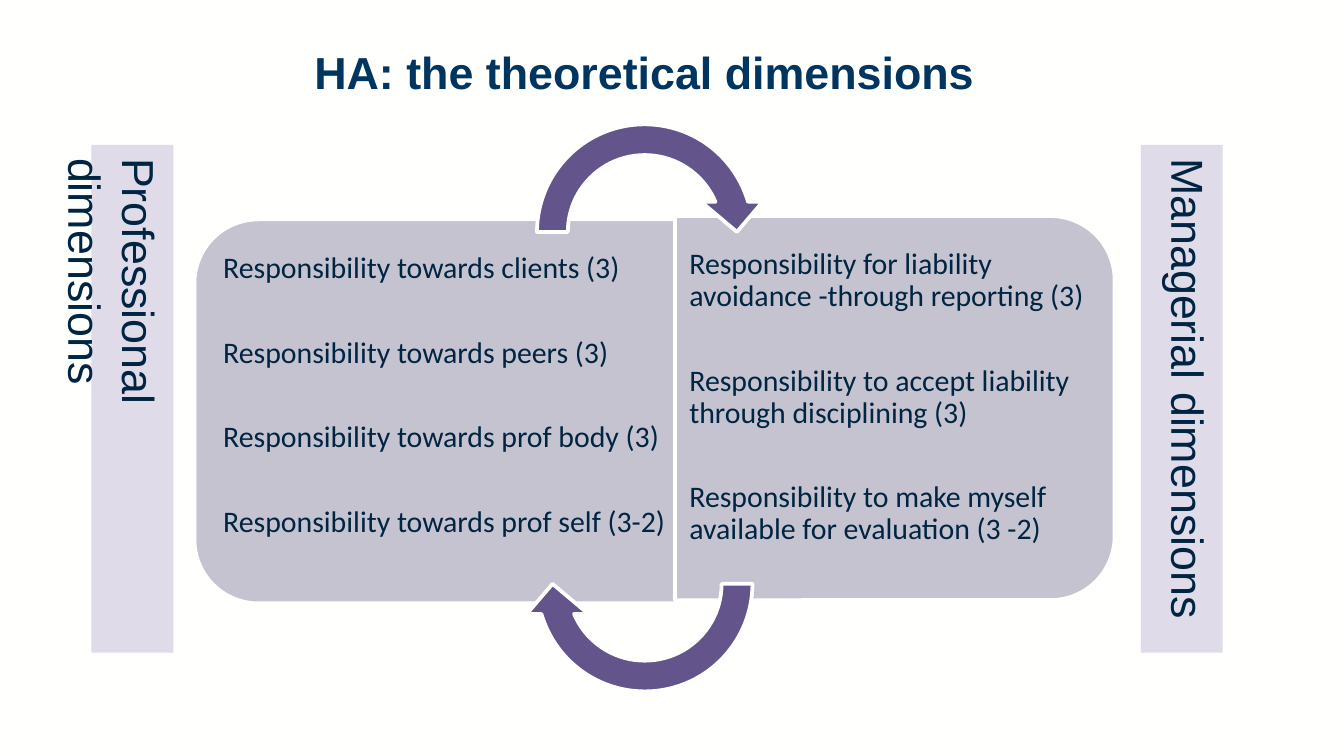
from dataclasses import dataclass

from pptx import Presentation
from pptx.dml.color import RGBColor
from pptx.enum.shapes import MSO_SHAPE
from pptx.enum.text import MSO_ANCHOR, MSO_AUTO_SIZE
from pptx.shapes.autoshape import Shape
from pptx.slide import Slide
from pptx.text.text import TextFrame
from pptx.util import Cm, Pt

PANEL = MSO_SHAPE.ROUND_2_SAME_RECTANGLE
CYCLE_ARROW = MSO_SHAPE.CIRCULAR_ARROW
TOP = MSO_ANCHOR.TOP
FIT_SHAPE = MSO_AUTO_SIZE.SHAPE_TO_FIT_TEXT


@dataclass(frozen=True)
class Theme:
    paper: RGBColor = RGBColor.from_string("FFFFFE")
    title: RGBColor = RGBColor.from_string("003560")
    ink: RGBColor = RGBColor.from_string("002542")
    panel: RGBColor = RGBColor.from_string("C6C3D0")
    arrow: RGBColor = RGBColor.from_string("63548B")
    bar: RGBColor = RGBColor.from_string("DFDBE9")
    heading_font: str = "Arial"
    body_font: str = "Calibri"
    heading_size: Pt = Pt(24)
    body_size: Pt = Pt(16)
    outline: Pt = Pt(2)
    item_gap: Pt = Pt(28)
    line_spacing: float = 0.9


@dataclass(frozen=True)
class Box:
    left: float
    top: float
    width: float
    height: float

    def lengths(self) -> tuple[Cm, Cm, Cm, Cm]:
        return Cm(self.left), Cm(self.top), Cm(self.width), Cm(self.height)


@dataclass(frozen=True)
class Dimension:
    label: str
    bar: Box
    panel: Box
    rotation: int
    text: Box
    left_inset: float
    right_inset: float
    responsibilities: tuple[str, ...]


@dataclass(frozen=True)
class Arrow:
    box: Box
    rotation: int


THEME = Theme()
TITLE_BOX = Box(5.69, 0.84, 18.39, 2.03)
DIMENSIONS = (
    Dimension(
        "Professional dimensions",
        Box(1.73, 2.74, 1.55, 9.6),
        Box(5.66, 2.16, 7.26, 11.23),
        270,
        Box(4.04, 4.5, 10.87, 6.55),
        0.18,
        0.25,
        (
            "Responsibility towards clients (3)",
            "Responsibility towards peers (3)",
            "Responsibility towards prof body (3)",
            "Responsibility towards prof self (3-2)",
        ),
    ),
    Dimension(
        "Managerial dimensions",
        Box(21.56, 2.74, 1.55, 9.6),
        Box(13.28, 3.56, 7.26, 8.31),
        90,
        Box(12.78, 4.42, 7.95, 6.55),
        0.25,
        0.18,
        (
            "Responsibility for liability avoidance -through reporting (3)",
            "Responsibility to accept liability through disciplining (3)",
            "Responsibility to make myself available for evaluation (3 -2)",
        ),
    ),
)
ARROWS = (
    Arrow(Box(9.86, 2.06, 4.65, 4.65), 0),
    Arrow(Box(9.86, 8.71, 4.65, 4.65), 180),
)


def add_text_box(slide: Slide, box: Box) -> Shape:
    """Add an empty wrapping text box anchored at the top."""
    text_box = slide.shapes.add_textbox(*box.lengths())
    text_box.text_frame.word_wrap = True
    text_box.text_frame.vertical_anchor = TOP
    return text_box


def write(frame: TextFrame, lines: tuple[str, ...], font: str, size: Pt,
          color: RGBColor, bold: bool = False, spacing: float = 1.0) -> None:
    """Write each line as a paragraph with one run."""
    for index, line in enumerate(lines):
        paragraph = frame.add_paragraph() if index else frame.paragraphs[0]
        paragraph.line_spacing = spacing
        paragraph.space_after = THEME.item_gap if index < len(lines) - 1 else Pt(0)
        run = paragraph.add_run()
        run.text = line
        run.font.name = font
        run.font.size = size
        run.font.bold = bold
        run.font.color.rgb = color


def add_outlined(slide: Slide, preset: MSO_SHAPE, box: Box, rotation: int,
                 fill: RGBColor) -> None:
    """Add a rotated preset shape with a paper-coloured outline."""
    shape = slide.shapes.add_shape(preset, *box.lengths())
    shape.shadow.inherit = False
    shape.rotation = rotation
    shape.fill.solid()
    shape.fill.fore_color.rgb = fill
    shape.line.color.rgb = THEME.paper
    shape.line.width = THEME.outline


def add_panel(slide: Slide, dimension: Dimension) -> None:
    """Add the panel and its list of responsibilities."""
    add_outlined(slide, PANEL, dimension.panel, dimension.rotation, THEME.panel)
    frame = add_text_box(slide, dimension.text).text_frame
    frame.margin_left = Cm(dimension.left_inset)
    frame.margin_right = Cm(dimension.right_inset)
    frame.margin_top = frame.margin_bottom = Cm(0.28)
    write(frame, dimension.responsibilities, THEME.body_font, THEME.body_size,
          THEME.ink, spacing=THEME.line_spacing)


def add_bar(slide: Slide, dimension: Dimension) -> None:
    """Add the side bar with its vertical label."""
    bar = add_text_box(slide, dimension.bar)
    bar.fill.solid()
    bar.fill.fore_color.rgb = THEME.bar
    frame = bar.text_frame
    frame.auto_size = FIT_SHAPE
    frame._txBody.bodyPr.set("vert", "eaVert")
    write(frame, (dimension.label,), THEME.heading_font, THEME.heading_size, THEME.ink)


def main() -> None:
    """Build and save the slide."""
    deck = Presentation()
    deck.slide_width, deck.slide_height = Cm(25.4), Cm(14.29)
    slide = deck.slides.add_slide(deck.slide_layouts[6])
    slide.background.fill.solid()
    slide.background.fill.fore_color.rgb = THEME.paper

    title = add_text_box(slide, TITLE_BOX)
    write(title.text_frame, ("HA: the theoretical dimensions",), THEME.heading_font,
          THEME.heading_size, THEME.title, bold=True, spacing=THEME.line_spacing)
    for dimension in DIMENSIONS:
        add_panel(slide, dimension)
    for arrow in ARROWS:
        add_outlined(slide, CYCLE_ARROW, arrow.box, arrow.rotation, THEME.arrow)
    for dimension in DIMENSIONS:
        add_bar(slide, dimension)
    deck.save("out.pptx")


if __name__ == "__main__":
    main()
